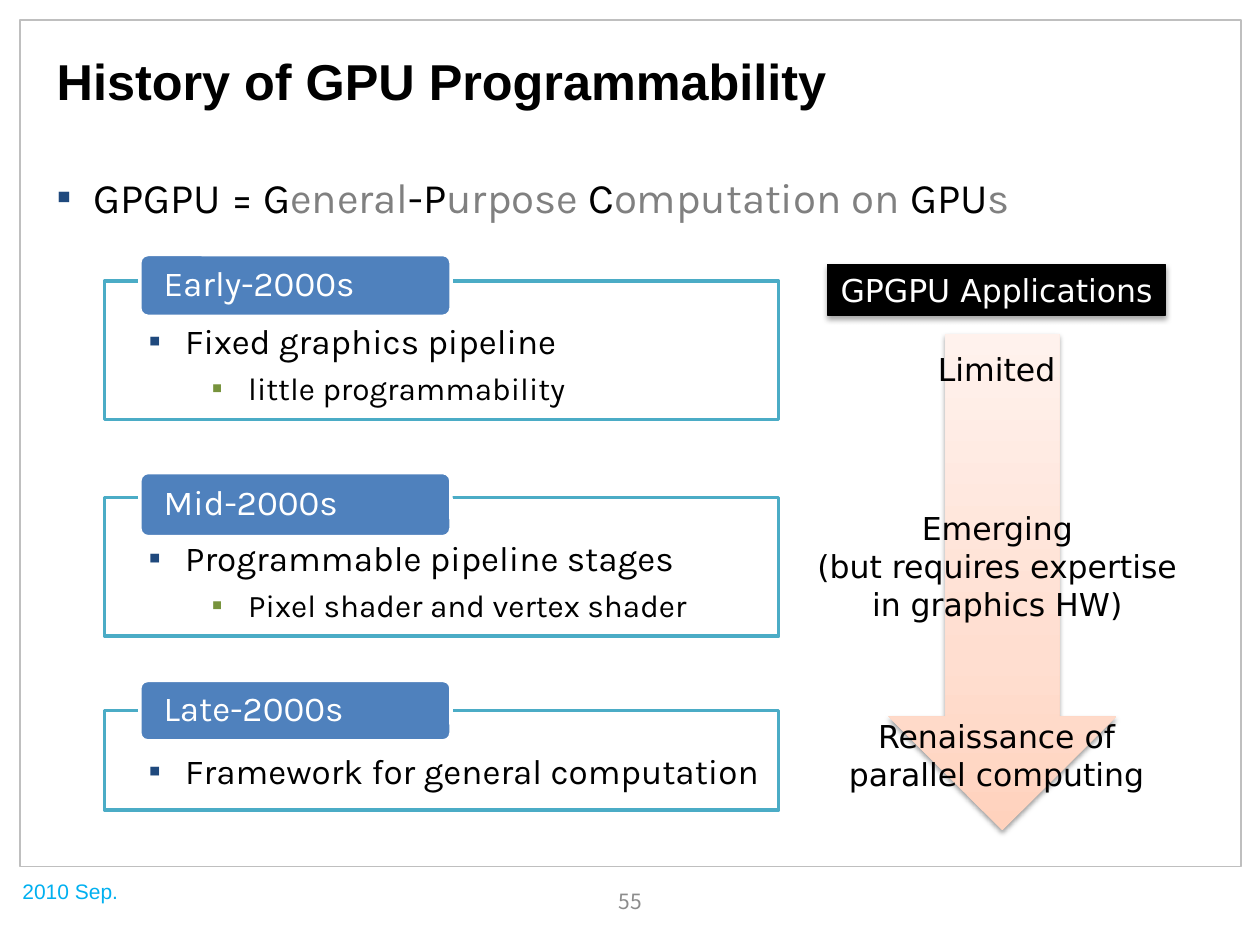
import pptx
import pptx.util
import pptx.dml.color
import pptx.enum.shapes
import pptx.enum.text
import pptx.oxml
import pptx.oxml.ns
from lxml import etree

Inches = pptx.util.Inches
Pt = pptx.util.Pt
RGBColor = pptx.dml.color.RGBColor
MSO_SHAPE = pptx.enum.shapes.MSO_SHAPE
PP_ALIGN = pptx.enum.text.PP_ALIGN
MSO_ANCHOR = pptx.enum.text.MSO_ANCHOR

BLACK = RGBColor(0x00, 0x00, 0x00)
WHITE = RGBColor(0xFF, 0xFF, 0xFF)
GREY = RGBColor(0x80, 0x80, 0x80)
PAGE_GREY = RGBColor(0x8C, 0x8C, 0x8C)
FRAME_GREY = RGBColor(0xBF, 0xBF, 0xBF)
SKY = RGBColor(0x00, 0xB0, 0xF0)
NAVY = RGBColor(0x1F, 0x49, 0x7D)
GREEN = RGBColor(0x77, 0x93, 0x3C)
TEAL = RGBColor(0x4B, 0xAC, 0xC6)
BLUE = RGBColor(0x4F, 0x81, 0xBD)
ARROW_STOPS = [
    (0, RGBColor(0xFF, 0xD2, 0xBD)),
    (35, RGBColor(0xFF, 0xDE, 0xD0)),
    (100, RGBColor(0xFF, 0xF2, 0xED)),
]

HEADING, BODY, LABEL, NUMBER = "Arial", "Karla", "DejaVu Sans", "Noto Sans CJK KR"

ERAS = [
    ("Early-2000s", ["Fixed graphics pipeline", "little programmability"],
     (2.23, 1.1), (2.02, 0.49)),
    ("Mid-2000s", ["Programmable pipeline stages", "Pixel shader and vertex shader"],
     (3.95, 1.1), (3.75, 0.51)),
    ("Late-2000s", ["Framework for general computation"],
     (5.64, 0.79), (5.4, 0.48)),
]
STAGES = [
    (["Limited"], (6.57, 2.73, 2.68, 0.4)),
    (["Emerging", "(but requires expertise in graphics HW)"], (6.34, 3.99, 3.15, 1.01)),
    (["Renaissance of parallel computing"], (6.57, 5.64, 2.68, 0.71)),
]
GPGPU_PARTS = ["GPGPU = G", "eneral", "-P", "urpose", " C", "omputation on ", "GPU", "s"]


def inches(box):
    return [Inches(length) for length in box]


def style(run, size, font, color, bold=False):
    run.font.size = Pt(size)
    run.font.name = font
    run.font.color.rgb = color
    run.font.bold = bold


def write(frame, lines, size, font, color, align=PP_ALIGN.LEFT, anchor=MSO_ANCHOR.TOP,
          wrap=True, bold=False):
    frame.text = "\n".join(lines)
    frame.word_wrap = wrap
    frame.vertical_anchor = anchor
    for paragraph in frame.paragraphs:
        paragraph.alignment = align
        for run in paragraph.runs:
            style(run, size, font, color, bold)


def add_bullet(paragraph, color, margin=0.29):
    properties = paragraph._p.get_or_add_pPr()
    properties.set("marL", str(Inches(margin)))
    properties.set("indent", str(-Inches(0.29)))
    for tag, name, value in [("a:buFont", "typeface", HEADING), ("a:buChar", "char", "▪")]:
        etree.SubElement(properties, pptx.oxml.ns.qn(tag)).set(name, value)
    bullet_color = etree.Element(pptx.oxml.ns.qn("a:buClr"))
    etree.SubElement(bullet_color, pptx.oxml.ns.qn("a:srgbClr")).set("val", str(color))
    properties.insert(0, bullet_color)


def add_block(slide, preset, box, fill=None, line=None, width=0.75):
    block = slide.shapes.add_shape(preset, *inches(box))
    block.shadow.inherit = False
    if fill is None:
        block.fill.background()
    else:
        block.fill.solid()
        block.fill.fore_color.rgb = fill
    if line is None:
        block.line.fill.background()
    else:
        block.line.color.rgb = line
        block.line.width = Pt(width)
    return block


def drop_shadow(block, opacity, distance):
    effects = block._element.spPr.find(pptx.oxml.ns.qn("a:effectLst"))
    effects.append(pptx.oxml.parse_xml(
        f'<a:outerShdw {pptx.oxml.ns.nsdecls("a")} blurRad="{Pt(3.1)}" '
        f'dist="{Pt(distance)}" dir="5400000" rotWithShape="0">'
        f'<a:srgbClr val="{BLACK}"><a:alpha val="{opacity * 1000}"/></a:srgbClr>'
        '</a:outerShdw>'))


def fill_gradient(block, stops):
    properties = block._element.spPr
    stop_xml = "".join(f'<a:gs pos="{position * 1000}"><a:srgbClr val="{color}"/></a:gs>'
                       for position, color in stops)
    gradient = pptx.oxml.parse_xml(
        f'<a:gradFill {pptx.oxml.ns.nsdecls("a")} rotWithShape="1"><a:gsLst>{stop_xml}'
        '</a:gsLst><a:lin ang="16200000" scaled="0"/></a:gradFill>')
    properties.replace(properties.find(pptx.oxml.ns.qn("a:noFill")), gradient)


def build_page(slide, frame_box, date_box, number_box):
    add_block(slide, MSO_SHAPE.RECTANGLE, frame_box, line=FRAME_GREY)
    date = slide.shapes.add_textbox(*inches(date_box))
    write(date.text_frame, ["2010 Sep."], 12, HEADING, SKY, wrap=False)
    number = slide.shapes.add_textbox(*inches(number_box))
    write(number.text_frame, ["55"], 12, NUMBER, PAGE_GREY, PP_ALIGN.CENTER, MSO_ANCHOR.MIDDLE)


def build_title(slide, box):
    title = slide.shapes.title
    title.left, title.top, title.width, title.height = inches(box)
    write(title.text_frame, ["History of GPU Programmability"], 28.8, HEADING, BLACK,
          anchor=MSO_ANCHOR.MIDDLE, bold=True)


def build_definition(slide, box):
    definition = slide.shapes.add_textbox(*inches(box))
    definition.text_frame.word_wrap = True
    paragraph = definition.text_frame.paragraphs[0]
    add_bullet(paragraph, NAVY)
    for index, part in enumerate(GPGPU_PARTS):
        run = paragraph.add_run()
        run.text = part
        style(run, 24, BODY, GREY if index % 2 else BLACK)


def build_era(slide, name, points, box, badge_box):
    panel = add_block(slide, MSO_SHAPE.RECTANGLE, box, WHITE, TEAL, 2)
    frame = panel.text_frame
    frame.margin_left, frame.margin_top = Inches(0.35), Inches(0.31)
    write(frame, points, 20, BODY, BLACK)
    add_bullet(frame.paragraphs[0], NAVY)
    for detail in frame.paragraphs[1:]:
        detail.level = 1
        add_bullet(detail, GREEN, 0.79)
        detail.space_before = Pt(4)
        detail.runs[0].font.size = Pt(18)

    badge = add_block(slide, MSO_SHAPE.ROUNDED_RECTANGLE, badge_box, BLUE, WHITE, 2)
    badge.adjustments[0] = 0.13
    frame = badge.text_frame
    frame.margin_left = frame.margin_right = Inches(0.17)
    frame.margin_top = frame.margin_bottom = Inches(0.02)
    write(frame, [name], 20, BODY, WHITE, anchor=MSO_ANCHOR.MIDDLE)
    frame.paragraphs[0].line_spacing = 0.9


def build_applications(slide, heading_box, arrow_box):
    arrow = add_block(slide, MSO_SHAPE.DOWN_ARROW, arrow_box)
    fill_gradient(arrow, ARROW_STOPS)
    drop_shadow(arrow, 38, 1.6)
    for lines, box in STAGES:
        stage = slide.shapes.add_textbox(*inches(box))
        write(stage.text_frame, lines, 18, LABEL, BLACK, PP_ALIGN.CENTER)
    heading = add_block(slide, MSO_SHAPE.RECTANGLE, heading_box, BLACK, BLACK)
    drop_shadow(heading, 35, 1.8)
    write(heading.text_frame, ["GPGPU Applications"], 18, LABEL, WHITE, PP_ALIGN.CENTER,
          wrap=False)


def main():
    deck = pptx.Presentation()
    deck.slide_width, deck.slide_height = Inches(10), Inches(7.5)
    slide = deck.slides.add_slide(deck.slide_layouts[5])
    build_page(slide, (0.16, 0.16, 9.69, 6.72), (0.08, 6.92, 0.97, 0.5),
               (3.84, 6.95, 2.33, 0.4))
    build_title(slide, (0.35, 0.36, 9.29, 0.55))
    build_definition(slide, (0.35, 1.31, 9.29, 0.63))
    for name, points, (top, height), (badge_top, badge_height) in ERAS:
        build_era(slide, name, points, (0.83, top, 5.35, height),
                  (1.11, badge_top, 2.47, badge_height))
    build_applications(slide, (6.57, 2.1, 2.68, 0.4), (7.05, 2.65, 1.81, 3.94))
    deck.save("out.pptx")


if __name__ == "__main__":
    main()
